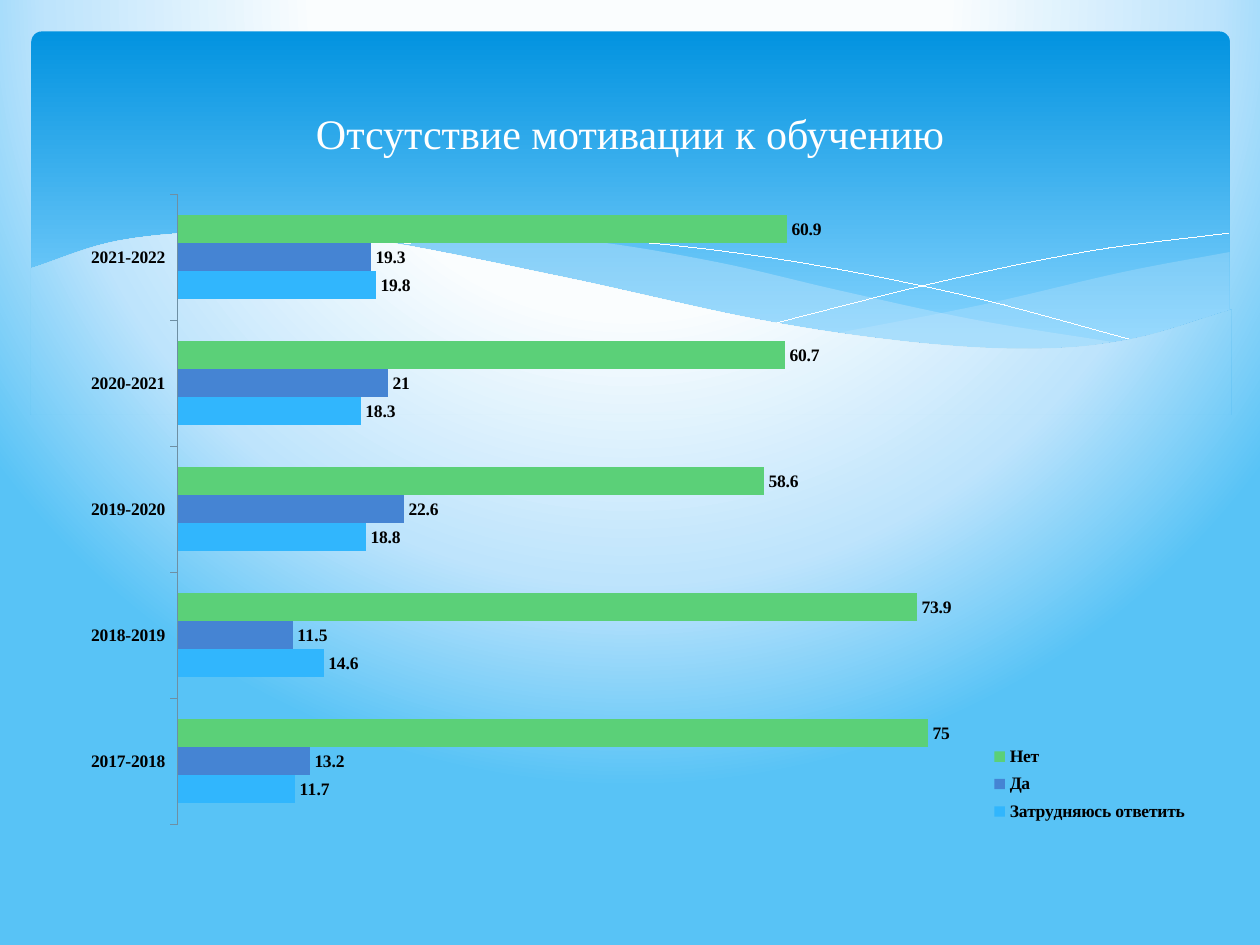
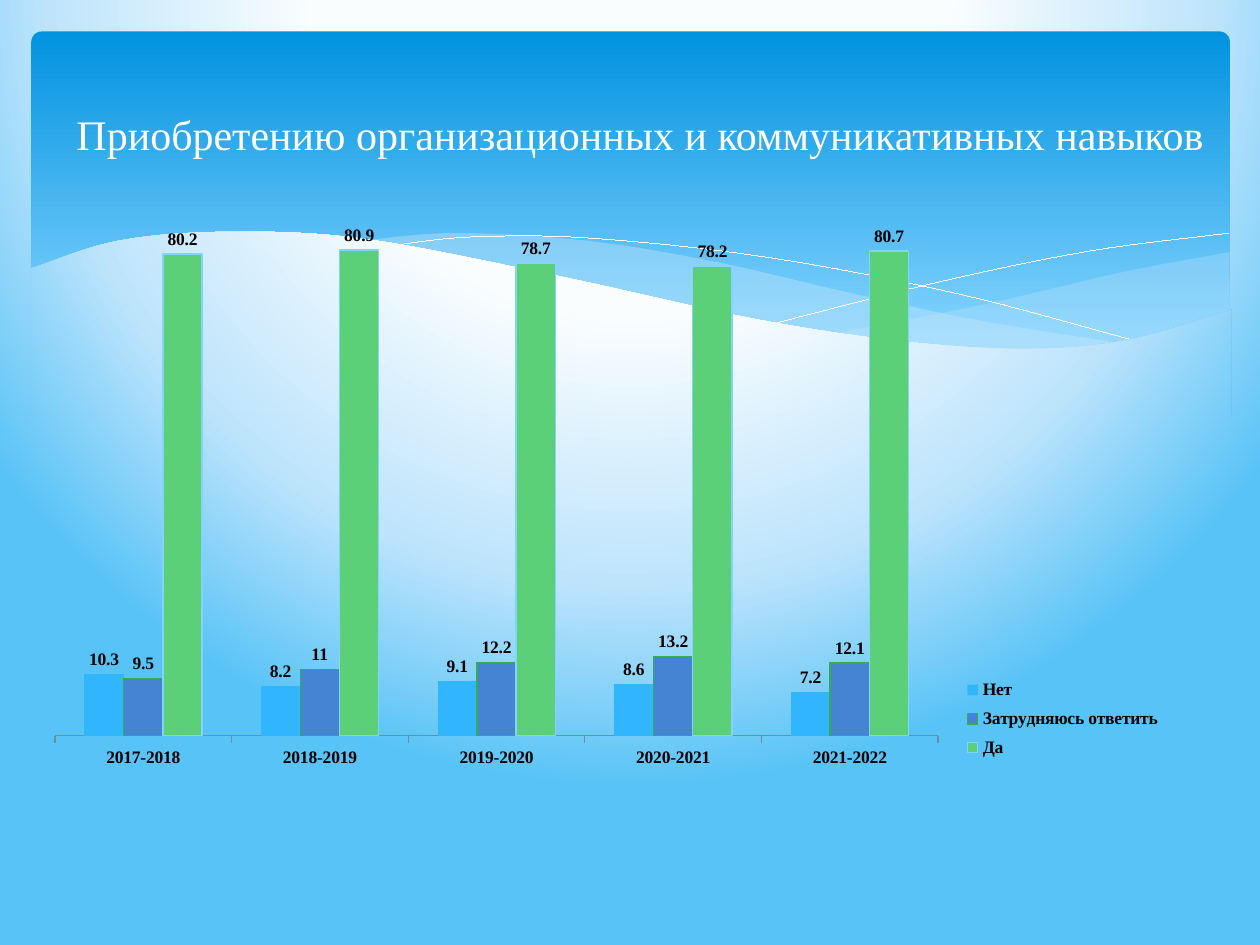
from dataclasses import dataclass
from itertools import chain
from typing import Optional

from pptx import Presentation, util as u
from pptx.chart.chart import Chart
from pptx.chart.data import CategoryChartData
from pptx.dml.color import RGBColor
from pptx.enum import chart as charts, shapes, text
from pptx.oxml import parse_xml
from pptx.oxml.ns import nsdecls, qn
from pptx.oxml.xmlchemy import BaseOxmlElement
from pptx.shapes.autoshape import Shape
from pptx.slide import Slide


# Theme
@dataclass(frozen=True)
class Theme:
    white: str = "FFFFFF"
    black: str = "000000"
    banner_top: str = "0293E0"
    banner_bottom: str = "83D3FE"
    sheen: str = "C6E7FC"
    glow: tuple = ((40, "FAFDFE"), (74, "BEE4FC"), (100, "58C3F6"))
    sky: str = "31B6FD"
    blue: str = "4584D3"
    green: str = "5BD078"
    green_edge: str = "32AE51"
    axis: str = "6E8FA3"
    font: str = "Times New Roman"
    title_size: float = 24
    chart_size: float = 10
    thin_line: float = 0.75


THEME = Theme()
YEARS = tuple(f"{year}-{year + 1}" for year in range(2017, 2022))
SMOOTH_STEPS = 8  # straight pieces between two knots of a curve


# What the slides hold
@dataclass(frozen=True)
class Frame:
    left: float
    top: float
    width: float
    height: float

    def lengths(self) -> tuple:
        return tuple(u.Pt(v) for v in (self.left, self.top, self.width, self.height))


@dataclass(frozen=True)
class Sheen:
    upper: tuple  # knots from one tip to the other
    lower: tuple  # knots on the way back
    alpha: int  # percent


@dataclass(frozen=True)
class Answer:
    name: str
    values: tuple
    color: str
    edge: Optional[str] = None


@dataclass(frozen=True)
class Survey:
    title: str
    title_frame: Frame
    chart_frame: Frame
    kind: charts.XL_CHART_TYPE
    axis_max: int
    plot: Frame  # percent of the chart
    legend: Frame  # percent of the chart
    answers: tuple


# Backdrop: a few knots per curve, in points; smooth() fills in the rest
BANNER = Frame(18, 18, 684.7, 194.4)
WAVE_CREST = ((17.5, 153.4), (68.4, 137.5), (132.5, 132.5), (210, 136.8), (321.8, 158.4),
              (434.2, 182.9), (522.7, 195.8), (592.6, 199.4), (647.3, 193.7),
              (703.5, 177.1))
WAVE_BASE = 236.9
RIGHT_SHEEN = Sheen(
    upper=((702.7, 144), (641.5, 155.5), (560.9, 174.2), (475.9, 190.8)),
    lower=((475.9, 190.8), (536.4, 198), (586.1, 200.2), (640.1, 195.8), (702.7, 177.8)),
    alpha=29)
MIDDLE_SHEEN = Sheen(
    upper=((205.9, 137.5), (259.9, 133.2), (334.8, 137.5), (409.7, 149.8), (481, 166.3),
           (558, 182.9), (643, 196.6)),
    lower=((643, 196.6), (589, 200.2), (519.8, 197.3), (432.7, 183.6), (323.3, 159.8),
           (260.6, 146.2), (205.9, 137.5)),
    alpha=40)
FALLING_STRAND = ((222.5, 140.4), (269.3, 135.4), (337.7, 136.1), (437.8, 146.9),
                  (547.2, 167.8), (653, 195.8))
RISING_STRAND = ((441.4, 185), (538.6, 160.6), (623.5, 143.3), (702, 133.2))

# Survey results
SURVEYS = (
    Survey("Отсутствие мотивации к обучению",
           title_frame=Frame(36, 26.6, 648, 98.6),
           chart_frame=Frame(31, 100, 652.3, 382.3),
           kind=charts.XL_CHART_TYPE.BAR_CLUSTERED, axis_max=80,
           plot=Frame(10.8, 2.9, 70.1, 94.2), legend=Frame(81.7, 84.3, 18, 13.5),
           answers=(
               Answer("Затрудняюсь ответить", (11.7, 14.6, 18.8, 18.3, 19.8), THEME.sky),
               Answer("Да", (13.2, 11.5, 22.6, 21, 19.3), THEME.blue),
               Answer("Нет", (75, 73.9, 58.6, 60.7, 60.9), THEME.green))),
    Survey("Приобретению организационных и коммуникативных навыков",
           title_frame=Frame(23.8, 36, 684, 80.6),
           chart_frame=Frame(31, 111.6, 646.6, 370.8),
           kind=charts.XL_CHART_TYPE.COLUMN_CLUSTERED, axis_max=90,
           plot=Frame(0, 0, 78.1, 83.3), legend=Frame(79.6, 73.3, 19, 14.8),
           answers=(
               Answer("Нет", (10.3, 8.2, 9.1, 8.6, 7.2), THEME.sky),
               Answer("Затрудняюсь ответить", (9.5, 11, 12.2, 13.2, 12.1), THEME.blue,
                      THEME.green_edge),
               Answer("Да", (80.2, 80.9, 78.7, 78.2, 80.7), THEME.green,
                      THEME.banner_bottom))),
)


# Helpers
def rgb(color: str) -> RGBColor:
    return RGBColor.from_string(color)


def style_font(font, size: float, color: str, bold: bool = False) -> None:
    font.name = THEME.font
    font.size = u.Pt(size)
    font.bold = bold
    font.color.rgb = rgb(color)


def fill_solid(fill, color: str) -> None:
    fill.solid()
    fill.fore_color.rgb = rgb(color)


def draw_line(line, color: str, width: float) -> None:
    line.color.rgb = rgb(color)
    line.width = u.Pt(width)


def spline(before: float, start: float, end: float, after: float, t: float) -> float:
    """One coordinate of a Catmull-Rom curve between start and end, t from 0 to 1."""
    return (2 * start + (end - before) * t
            + (2 * before - 5 * start + 4 * end - after) * t ** 2
            + (3 * start - before - 3 * end + after) * t ** 3) / 2


def mirrored(tip: tuple, neighbour: tuple) -> tuple:
    return tuple(2 * a - b for a, b in zip(tip, neighbour))


def smooth(knots: tuple) -> list:
    """A soft curve through all knots, as a list of close points."""
    padded = (mirrored(knots[0], knots[1]), *knots, mirrored(knots[-1], knots[-2]))
    points = [tuple(spline(*axis, step / SMOOTH_STEPS) for axis in zip(*four))
              for four in zip(padded, padded[1:], padded[2:], padded[3:])
              for step in range(SMOOTH_STEPS)]
    return [*points, knots[-1]]


def draw_outline(page: Slide, *edges: list, close: bool = True) -> Shape:
    start, *rest = [(u.Pt(x), u.Pt(y)) for x, y in chain(*edges)]
    builder = page.shapes.build_freeform(*start)
    builder.add_line_segments(rest, close=close)
    shape = builder.convert_to_shape()
    shape.element.remove(shape.element.find(qn("p:style")))
    return shape


# Backdrop parts
def paint_glow(page: Slide) -> None:
    stops = "".join(f'<a:gs pos="{share * 1000}"><a:srgbClr val="{color}"/></a:gs>'
                    for share, color in THEME.glow)
    page.element.cSld.insert(0, parse_xml(
        f'<p:bg {nsdecls("p", "a")}><p:bgPr><a:gradFill rotWithShape="1">'
        f'<a:gsLst>{stops}</a:gsLst><a:path path="circle">'
        '<a:fillToRect l="20000" t="-40000" r="20000" b="140000"/></a:path>'
        '</a:gradFill><a:effectLst/></p:bgPr></p:bg>'))


def draw_banner(page: Slide) -> None:
    banner = page.shapes.add_shape(shapes.MSO_SHAPE.ROUNDED_RECTANGLE, *BANNER.lengths())
    banner.adjustments[0] = 0.03
    banner.shadow.inherit = False
    banner.line.fill.background()
    banner.fill.gradient()
    banner.fill.gradient_angle = 270
    looks = ((0, THEME.banner_top), (0.9, THEME.banner_bottom))
    for stop, (position, color) in zip(banner.fill.gradient_stops, looks):
        stop.position = position
        stop.color.rgb = rgb(color)


def draw_sheen(page: Slide, sheen: Sheen) -> None:
    shape = draw_outline(page, smooth(sheen.upper), smooth(sheen.lower))
    fill_solid(shape.fill, THEME.sheen)
    color = shape.element.spPr.find(f'{qn("a:solidFill")}/{qn("a:srgbClr")}')
    color.append(parse_xml(f'<a:alpha {nsdecls("a")} val="{sheen.alpha * 1000}"/>'))


def draw_strand(page: Slide, knots: tuple) -> None:
    strand = draw_outline(page, smooth(knots), close=False)
    strand.fill.background()
    draw_line(strand.line, THEME.white, 0)


def draw_wave(page: Slide) -> None:
    """The wave shows the slide background through the banner."""
    left, right = WAVE_CREST[0][0], WAVE_CREST[-1][0]
    base = [(right, WAVE_BASE), (left, WAVE_BASE)]
    draw_outline(page, smooth(WAVE_CREST), base).element.set("useBgFill", "1")


def draw_backdrop(page: Slide) -> None:
    paint_glow(page)
    draw_banner(page)
    for sheen in (RIGHT_SHEEN, MIDDLE_SHEEN):
        draw_sheen(page, sheen)
    for knots in (FALLING_STRAND, RISING_STRAND):
        draw_strand(page, knots)
    draw_wave(page)


def add_title(page: Slide, survey: Survey) -> None:
    box = page.shapes.add_textbox(*survey.title_frame.lengths())
    box.text_frame.word_wrap = True
    box.text_frame.vertical_anchor = text.MSO_ANCHOR.MIDDLE
    para = box.text_frame.paragraphs[0]
    para.text = survey.title
    para.alignment = text.PP_ALIGN.CENTER
    style_font(para.font, THEME.title_size, THEME.white)


# Charts
def place(part: BaseOxmlElement, index: int, frame: Frame, target: str = "") -> None:
    for old in part.findall(qn("c:layout")):
        part.remove(old)
    sides = zip("xywh", (frame.left, frame.top, frame.width, frame.height))
    shares = "".join(f'<c:{side} val="{percent / 100:.3f}"/>' for side, percent in sides)
    part.insert(index, parse_xml(
        f'<c:layout {nsdecls("c")}><c:manualLayout>{target}<c:xMode val="edge"/>'
        f'<c:yMode val="edge"/>{shares}</c:manualLayout></c:layout>'))


def style_axes(chart: Chart, axis_max: int) -> None:
    years = chart.category_axis
    years.major_tick_mark = charts.XL_TICK_MARK.OUTSIDE
    years.has_major_gridlines = False
    draw_line(years.format.line, THEME.axis, THEME.thin_line)
    style_font(years.tick_labels.font, THEME.chart_size, THEME.black, bold=True)
    scale = chart.value_axis
    scale.minimum_scale, scale.maximum_scale = 0, axis_max
    scale.has_major_gridlines = False
    scale.visible = False


def style_bars(chart: Chart, answers: tuple) -> None:
    plot = chart.plots[0]
    plot.gap_width, plot.overlap = 150, 0
    plot.vary_by_categories = False
    for series, answer in zip(plot.series, answers):
        fill_solid(series.format.fill, answer.color)
        if answer.edge:
            draw_line(series.format.line, answer.edge, THEME.thin_line)
        labels = series.data_labels
        labels.show_value = True
        labels.position = charts.XL_LABEL_POSITION.OUTSIDE_END
        style_font(labels.font, THEME.chart_size, THEME.black, bold=True)


def add_legend(chart: Chart) -> None:
    chart.has_legend = True
    chart.legend.position = charts.XL_LEGEND_POSITION.RIGHT
    chart.legend.include_in_layout = False
    style_font(chart.legend.font, THEME.chart_size, THEME.black, bold=True)


def add_survey_chart(page: Slide, survey: Survey) -> None:
    data = CategoryChartData()
    data.categories = YEARS
    for answer in survey.answers:
        data.add_series(answer.name, answer.values)
    chart = page.shapes.add_chart(survey.kind, *survey.chart_frame.lengths(), data).chart
    chart.has_title = False
    style_font(chart.font, THEME.chart_size, THEME.black)
    style_axes(chart, survey.axis_max)
    style_bars(chart, survey.answers)
    add_legend(chart)

    # Fixed places for plot and legend, and a clear chart ground
    space = chart.element
    place(space.xpath("c:chart/c:plotArea")[0], 0, survey.plot,
          '<c:layoutTarget val="inner"/>')
    place(space.xpath("c:chart/c:legend")[0], 1, survey.legend)
    space.find(qn("c:chart")).addnext(parse_xml(
        f'<c:spPr {nsdecls("c", "a")}><a:noFill/><a:ln><a:noFill/></a:ln></c:spPr>'))


def main() -> None:
    deck = Presentation()
    deck.slide_width, deck.slide_height = u.Pt(720), u.Pt(540)
    for survey in SURVEYS:
        page = deck.slides.add_slide(deck.slide_layouts[6])
        draw_backdrop(page)
        add_title(page, survey)
        add_survey_chart(page, survey)
    deck.save("out.pptx")


if __name__ == "__main__":
    main()
